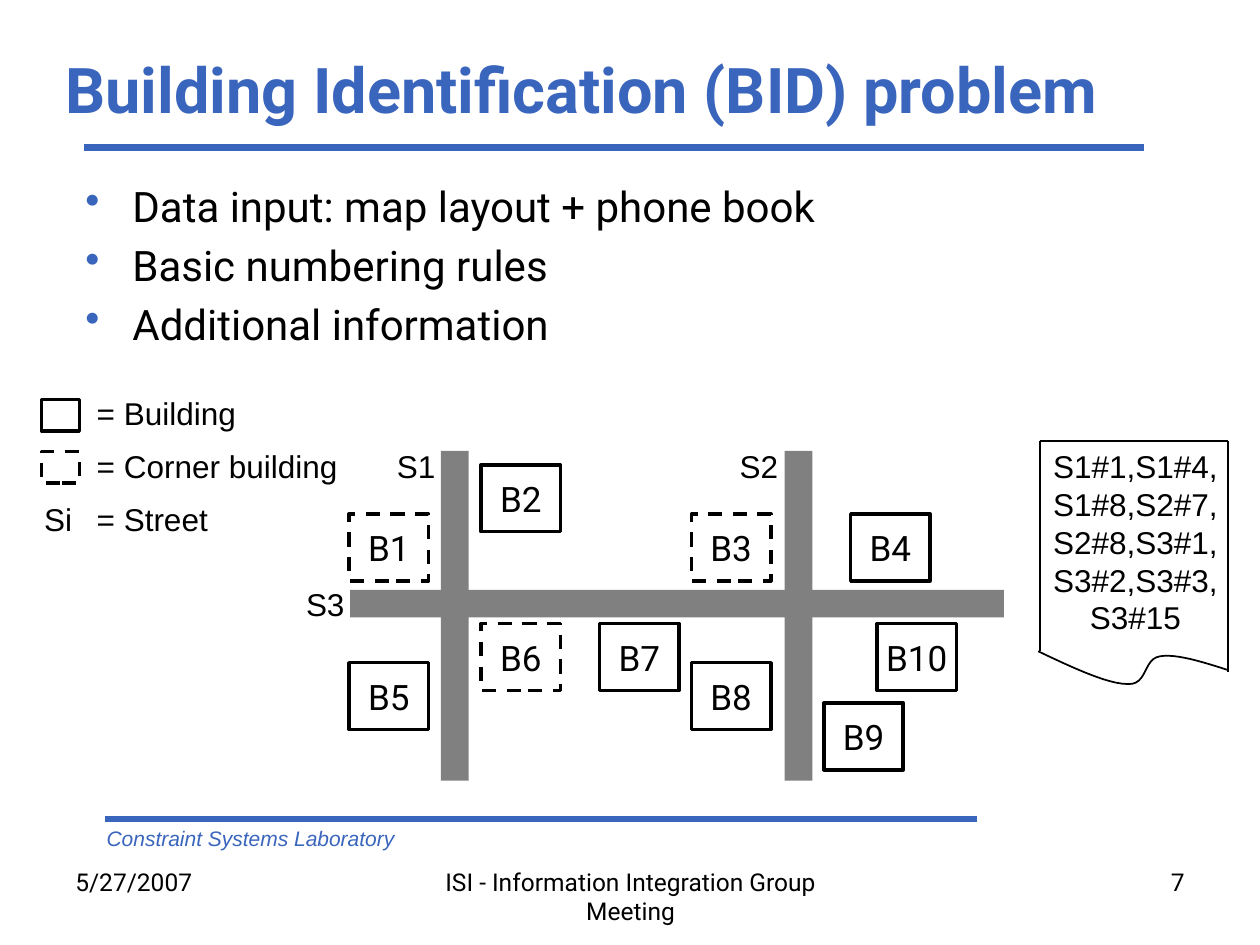
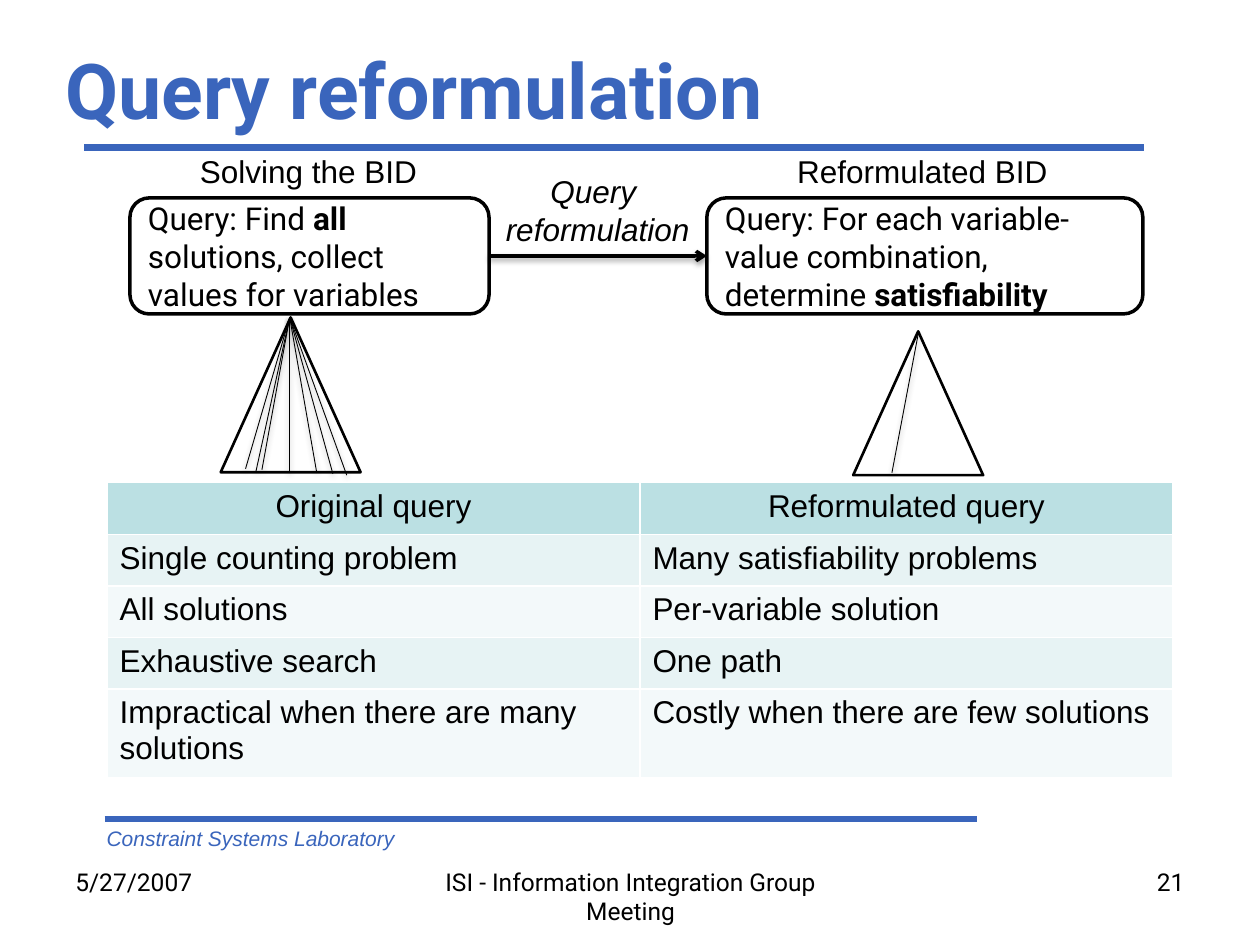
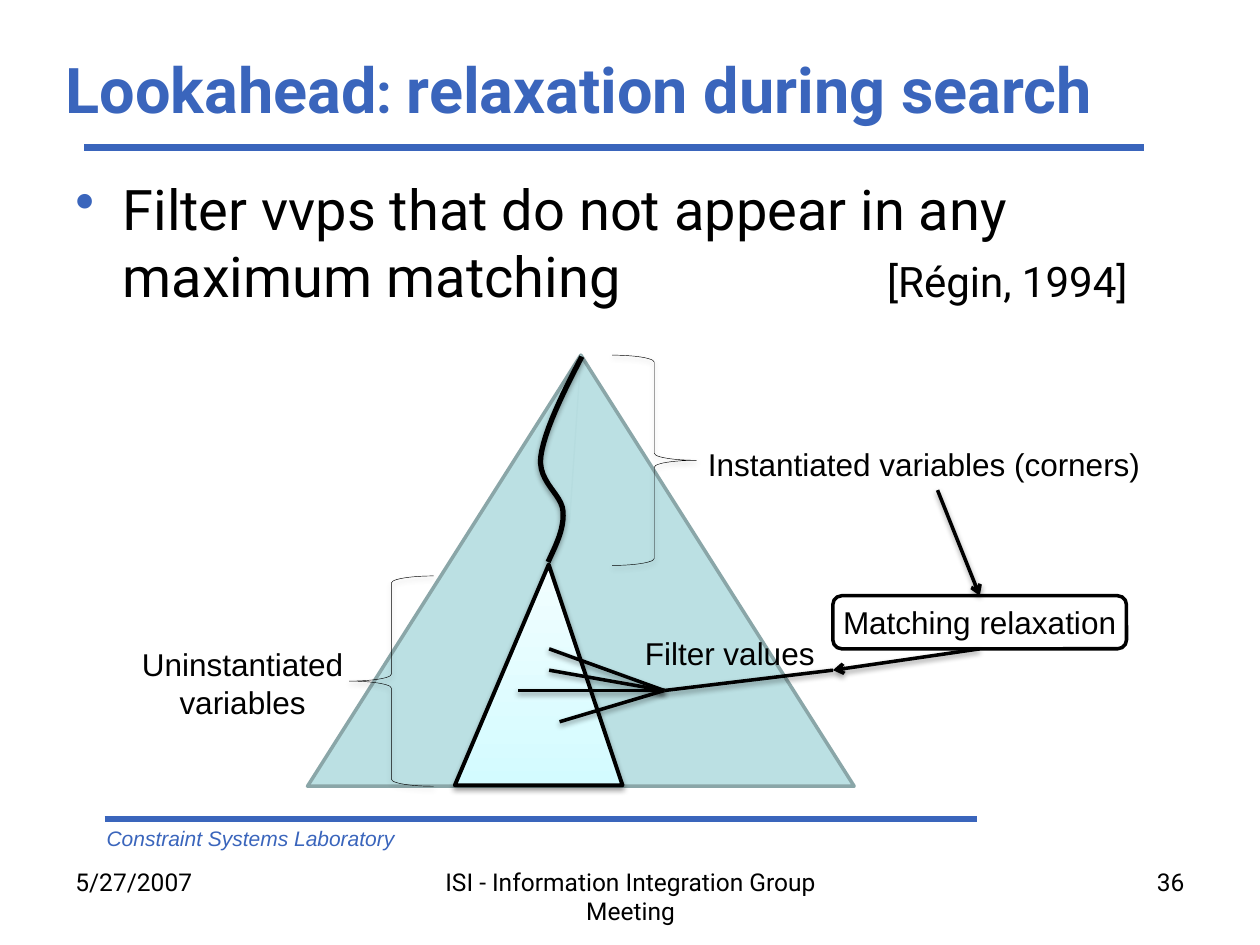
"""Build three slides on the building identification problem."""
from itertools import product

from pptx import Presentation
from pptx.dml.color import RGBColor
from pptx.enum.dml import MSO_LINE
from pptx.enum.shapes import MSO_CONNECTOR, MSO_SHAPE
from pptx.enum.text import MSO_ANCHOR, PP_ALIGN
from pptx.oxml import parse_xml
from pptx.oxml.ns import nsdecls
from pptx.util import Cm, Pt

COLORS = {
    "blue": "3A65BC", "black": "000000", "white": "FFFFFF", "street": "808080",
    "teal": "BBE0E3", "teal edge": "8AA6A8", "teal line": "B6DCDF",
    "odd row": "E7F3F4", "even row": "F3F9FA", "ice": "D3FBFF", "pale ice": "F2FEFF",
}
RGB = {name: RGBColor.from_string(value) for name, value in COLORS.items()}
NO_EFFECT = f"<a:effectLst {nsdecls('a')}/>"
SHADOW = (f"<a:effectLst {nsdecls('a')}>"
          '<a:outerShdw blurRad="39700" dist="20000" dir="5400000" rotWithShape="0">'
          '<a:srgbClr val="000000"><a:alpha val="38000"/></a:srgbClr>'
          "</a:outerShdw></a:effectLst>")


def add_box(page, kind, at, text="", size=18, font="Arial", color="black", fill=None,
            line=None, width=2, align=PP_ALIGN.LEFT, anchor=MSO_ANCHOR.TOP, wrap=False):
    """Add a shape, or a text box if kind is None; a bar in the text starts a new run."""
    place = [Cm(length) for length in at]
    if kind is None:
        box = page.shapes.add_textbox(*place)
    else:
        box = page.shapes.add_shape(kind, *place)
        box.shadow.inherit = False
        if fill:
            box.fill.solid()
            box.fill.fore_color.rgb = RGB[fill]
        else:
            box.fill.background()
        if line:
            box.line.color.rgb = RGB[line]
            box.line.width = Pt(width)
        else:
            box.line.fill.background()
    frame = box.text_frame
    frame.word_wrap = wrap
    frame.vertical_anchor = anchor
    for index, words in enumerate(text.split("\n") if text else []):
        paragraph = frame.add_paragraph() if index else frame.paragraphs[0]
        paragraph.alignment = align
        for part in words.split("|"):
            span = paragraph.add_run()
            span.text = part
            span.font.size = Pt(size)
            span.font.name = font
            span.font.color.rgb = RGB[color]
    return box


def add_line(page, start, end, width, color="black", shadow=False, arrow=False):
    """Add a straight connector between two points."""
    points = [Cm(length) for length in (*start, *end)]
    connector = page.shapes.add_connector(MSO_CONNECTOR.STRAIGHT, *points)
    connector.line.color.rgb = RGB[color]
    connector.line.width = Pt(width)
    if arrow:
        connector.line._get_or_add_ln().append(
            parse_xml(f"<a:tailEnd {nsdecls('a')} type=\"arrow\"/>"))
    connector._element.spPr.append(parse_xml(SHADOW if shadow else NO_EFFECT))
    return connector


deck = Presentation()
deck.slide_width, deck.slide_height = Cm(25.4), Cm(19.05)

pages = []
for title, title_size, number in (
        ("Building Identification (BID) problem", 36, "7"),
        ("Query reformulation", 44, "21"),
        ("Lookahead|: |relaxation during search", 36, "36")):
    page = deck.slides.add_slide(deck.slide_layouts[6])
    pages.append(page)
    add_line(page, (1.7, 2.97), (23.06, 2.97), 4, "blue")
    add_line(page, (2.11, 16.51), (19.69, 16.51), 4, "blue")
    laboratory = add_box(page, None, (1.9, 16.51, 13.34, 0.76),
                         "Constraint Systems Laboratory", 12, color="blue", wrap=True)
    laboratory.text_frame.paragraphs[0].runs[0].font.italic = True
    heading = add_box(page, None, (1.07, 0.84, 22.86, 1.9), title, title_size, "Roboto",
                      "blue", anchor=MSO_ANCHOR.MIDDLE, wrap=True)
    for span in heading.text_frame.paragraphs[0].runs:
        span.font.bold = True
        if span.text == ": ":
            span.font.size = Pt(32)
    for left, width, text, align in (
            (1.27, 5.92, "5/27/2007", PP_ALIGN.LEFT),
            (18.21, 5.92, number, PP_ALIGN.RIGHT),
            (8.69, 8.05, "ISI - Information Integration Group Meeting", PP_ALIGN.CENTER)):
        add_box(page, None, (left, 17.35, width, 1.32), text, 14, "Roboto",
                align=align, wrap=True)
map_page, query_page, search_page = pages

input_list = add_box(
    map_page, None, (1.47, 3.51, 22.66, 12.57),
    "Data input: map layout + phone book\nBasic numbering rules\nAdditional information",
    24, "Roboto", wrap=True)
for street in ((7.06, 11.89, 13.18, 0.56), (8.89, 9.09, 0.56, 6.65),
               (15.82, 9.09, 0.56, 6.65)):
    add_box(map_page, MSO_SHAPE.RECTANGLE, street, fill="street")
corner_buildings = ("B1", "B3", "B6")
for name, left, top in (
        ("B1", 7.04, 10.36), ("B2", 9.7, 9.37), ("B3", 13.94, 10.36), ("B4", 17.15, 10.36),
        ("B5", 7.04, 13.36), ("B6", 9.7, 12.57), ("B7", 12.09, 12.57),
        ("B8", 13.94, 13.36), ("B9", 16.61, 14.17), ("B10", 17.68, 12.57)):
    building = add_box(map_page, MSO_SHAPE.RECTANGLE, (left, top, 1.6, 1.35), name, 20,
                       "Roboto", fill="white", line="black", align=PP_ALIGN.CENTER,
                       anchor=MSO_ANCHOR.MIDDLE)
    if name in corner_buildings:
        building.line.dash_style = MSO_LINE.DASH
for name, left, top in (("S1", 7.75, 8.89), ("S2", 14.66, 8.89), ("S3", 5.92, 11.66),
                        ("Si", 0.64, 9.96)):
    add_box(map_page, None, (left, top, 1.09 if name == "Si" else 1.3, 1.02), name)
for row, (meaning, width) in enumerate(
        (("= Building", 3.35), ("= Corner building", 5.41), ("= Street", 2.77))):
    add_box(map_page, None, (1.7, 7.82 + 1.07 * row, width, 1.02), meaning)
for row, dash in enumerate((MSO_LINE.SOLID, MSO_LINE.DASH)):
    key = add_box(map_page, MSO_SHAPE.RECTANGLE, (0.84, 8.05 + 1.05 * row, 0.76, 0.64),
                  fill="white", line="black")
    key.line.dash_style = dash
add_box(map_page, None, (20.96, 8.89, 3.86, 4.11),
        "S1#1,S1#4,\nS1#8,S2#7,\nS2#8,S3#1,\nS3#2,S3#3,\nS3#15", align=PP_ALIGN.CENTER)
for start, end in (((20.96, 8.89), (24.76, 8.89)), ((20.96, 13.13), (20.96, 8.89)),
                   ((24.76, 13.55), (24.76, 8.89))):
    add_line(map_page, start, end, 1)

queries = []
for left, width, text in (
        (2.62, 7.24, "Query: Find |all| solutions, collect values for variables"),
        (14.25, 8.79, "Query: For each variable-value combination, determine |satisfiability")):
    query = add_box(query_page, MSO_SHAPE.ROUNDED_RECTANGLE, (left, 3.99, width, 2.34), text,
                    18, "Roboto", fill="white", line="black", anchor=MSO_ANCHOR.MIDDLE,
                    wrap=True)
    query.text_frame.paragraphs[0].runs[1].font.bold = True
    queries.append(query)
add_box(query_page, None, (3.78, 2.95, 4.93, 1.02), "Solving the BID")
add_box(query_page, None, (15.82, 2.95, 5.61, 1.02), "Reformulated BID")
step = add_line(query_page, (9.86, 5.16), (14.25, 5.16), 2, shadow=True, arrow=True)
step.begin_connect(queries[0], 3)
step.end_connect(queries[1], 1)
step_name = add_box(query_page, None, (9.93, 3.35, 4.24, 1.8), "Query \nreformulation",
                    align=PP_ALIGN.CENTER)
for paragraph in step_name.text_frame.paragraphs:
    paragraph.runs[0].font.italic = True
for tree, apex, leaves in (
        ((4.45, 6.4, 2.82, 3.12), (5.84, 6.4),
         ((4.95, 9.45), (5.16, 9.5), (5.28, 9.47), (5.84, 9.53), (6.38, 9.5), (6.71, 9.55),
          (6.99, 9.58))),
        ((17.2, 6.68, 2.62, 2.9), (18.52, 6.68), ((17.98, 9.53),))):
    add_box(query_page, MSO_SHAPE.ISOSCELES_TRIANGLE, tree, fill="white", line="black",
            width=1.5)
    for leaf in leaves:
        add_line(query_page, apex, leaf, 0.5, shadow=True)

comparison = (
    ("Original query", "Reformulated query"),
    ("Single counting problem", "Many satisfiability problems"),
    ("All solutions", "Per-variable solution"),
    ("Exhaustive search", "One path"),
    ("Impractical when there are many solutions", "Costly when there are few solutions"),
)
table = query_page.shapes.add_table(5, 2, Cm(2.16), Cm(9.73), Cm(21.48), Cm(5.94)).table
for row, height in zip(table.rows, (1.04, 1.04, 1.04, 1.04, 1.78)):
    row.height = Cm(height)
for row, column in product(range(5), range(2)):
    cell = table.cell(row, column)
    cell.fill.solid()
    cell.fill.fore_color.rgb = RGB["teal" if row == 0 else "odd row" if row % 2 else "even row"]
    cell.text_frame.text = comparison[row][column]
    paragraph = cell.text_frame.paragraphs[0]
    paragraph.alignment = PP_ALIGN.LEFT if row else PP_ALIGN.CENTER
    span = paragraph.runs[0]
    span.font.size = Pt(18)
    span.font.name = "Arial"
    span.font.bold = False
    span.font.color.rgb = RGB["black"]

filter_rule = add_box(
    search_page, None, (1.27, 3.39, 22.66, 12.57),
    "Filter vvps that do not appear in any maximum matching\t|[Régin, 1994]", 32, "Roboto",
    wrap=True)
filter_rule.text_frame.paragraphs[0].runs[1].font.size = Pt(24)
add_box(search_page, MSO_SHAPE.ISOSCELES_TRIANGLE, (6.2, 7.16, 11.02, 8.69), fill="teal",
        line="teal edge")
add_line(search_page, (11.71, 7.16), (11.48, 10.54), 0.75, "teal line")
subtree = add_box(search_page, MSO_SHAPE.ISOSCELES_TRIANGLE, (9.17, 11.38, 3.38, 4.45),
                  line="black", width=2.25)
subtree.adjustments[0] = 0.56
subtree.fill.gradient()
subtree.fill.gradient_angle = 90
for stop, name in zip(subtree.fill.gradient_stops, ("ice", "pale ice")):
    stop.color.rgb = RGB[name]
shadowed = [subtree]
for left, top, turn in ((12.34, 7.16, 0), (7.04, 11.61, 180)):
    brace = add_box(search_page, MSO_SHAPE.RIGHT_BRACE, (left, top, 1.7, 4.24), line="black",
                    width=0.25)
    brace.rotation = turn
    shadowed.append(brace)
add_box(search_page, None, (14.02, 8.84, 9.32, 1.02), "Instantiated variables (corners)")
add_box(search_page, None, (2.59, 12.88, 4.6, 1.8), "Uninstantiated\nvariables",
        align=PP_ALIGN.CENTER)
matching = add_box(search_page, MSO_SHAPE.ROUNDED_RECTANGLE, (16.79, 12.01, 5.92, 1.07),
                   "Matching relaxation", fill="white", line="black",
                   align=PP_ALIGN.CENTER, anchor=MSO_ANCHOR.MIDDLE)
to_matching = add_line(search_page, (18.9, 9.88), (19.75, 12.01), 2, shadow=True, arrow=True)
to_matching.end_connect(matching, 0)
fan, bend = (13.39, 13.92), (16.79, 13.51)
from_matching = add_line(search_page, (19.75, 13.08), bend, 2, shadow=True, arrow=True)
from_matching.begin_connect(matching, 2)
add_line(search_page, bend, fan, 2, shadow=True)
for value in ((11.07, 13.08), (11.07, 13.51), (10.44, 13.92), (11.28, 14.55)):
    add_line(search_page, fan, value, 2, shadow=True)
add_box(search_page, None, (12.75, 12.65, 3.96, 1.02), "Filter values")

torn_edge = ((20.93, 13.13), (21.62, 13.46), (22.33, 13.79), (22.73, 13.79), (23.14, 13.82),
             (23.04, 13.28), (23.39, 13.23), (23.72, 13.18), (24.23, 13.34), (24.76, 13.51))
search_path = ((11.73, 7.19), (11.35, 7.92), (10.97, 8.69), (10.9, 9.22), (10.85, 9.73),
               (11.33, 9.96), (11.35, 10.31), (11.38, 10.67), (11.2, 11), (11.05, 11.33))
for page, controls, width in ((map_page, torn_edge, 1), (search_page, search_path, 3)):
    points = []
    for first, step_number in product(range(0, 9, 3), range(1, 13)):
        t = step_number / 12
        weights = ((1 - t) ** 3, 3 * t * (1 - t) ** 2, 3 * t ** 2 * (1 - t), t ** 3)
        bezier = controls[first:first + 4]
        points.append([Cm(sum(weight * point[axis] for weight, point in zip(weights, bezier)))
                       for axis in (0, 1)])
    builder = page.shapes.build_freeform(Cm(controls[0][0]), Cm(controls[0][1]))
    builder.add_line_segments(points, close=False)
    curve = builder.convert_to_shape()
    curve.shadow.inherit = False
    curve.fill.background()
    curve.line.color.rgb = RGB["black"]
    curve.line.width = Pt(width)
    if page is search_page:
        shadowed.append(curve)

for shape in shadowed:
    properties = shape._element.spPr
    properties.replace(properties.find(parse_xml(NO_EFFECT).tag), parse_xml(SHADOW))

for box in (input_list, filter_rule):
    for index, paragraph in enumerate(box.text_frame.paragraphs):
        settings = paragraph._p.get_or_add_pPr()
        settings.set("marL", str(Cm(0.95)))
        settings.set("indent", str(-Cm(0.95)))
        settings.append(parse_xml(f'<a:buClr {nsdecls("a")}>'
                                  f'<a:srgbClr val="{COLORS["blue"]}"/></a:buClr>'))
        settings.append(parse_xml(f'<a:buChar {nsdecls("a")} char="•"/>'))
        if box is filter_rule:
            settings.append(parse_xml(f'<a:tabLst {nsdecls("a")}>'
                                      f'<a:tab pos="{Cm(22.05)}" algn="r"/></a:tabLst>'))
        if index:
            paragraph.space_before = Pt(5)

deck.save("out.pptx")
